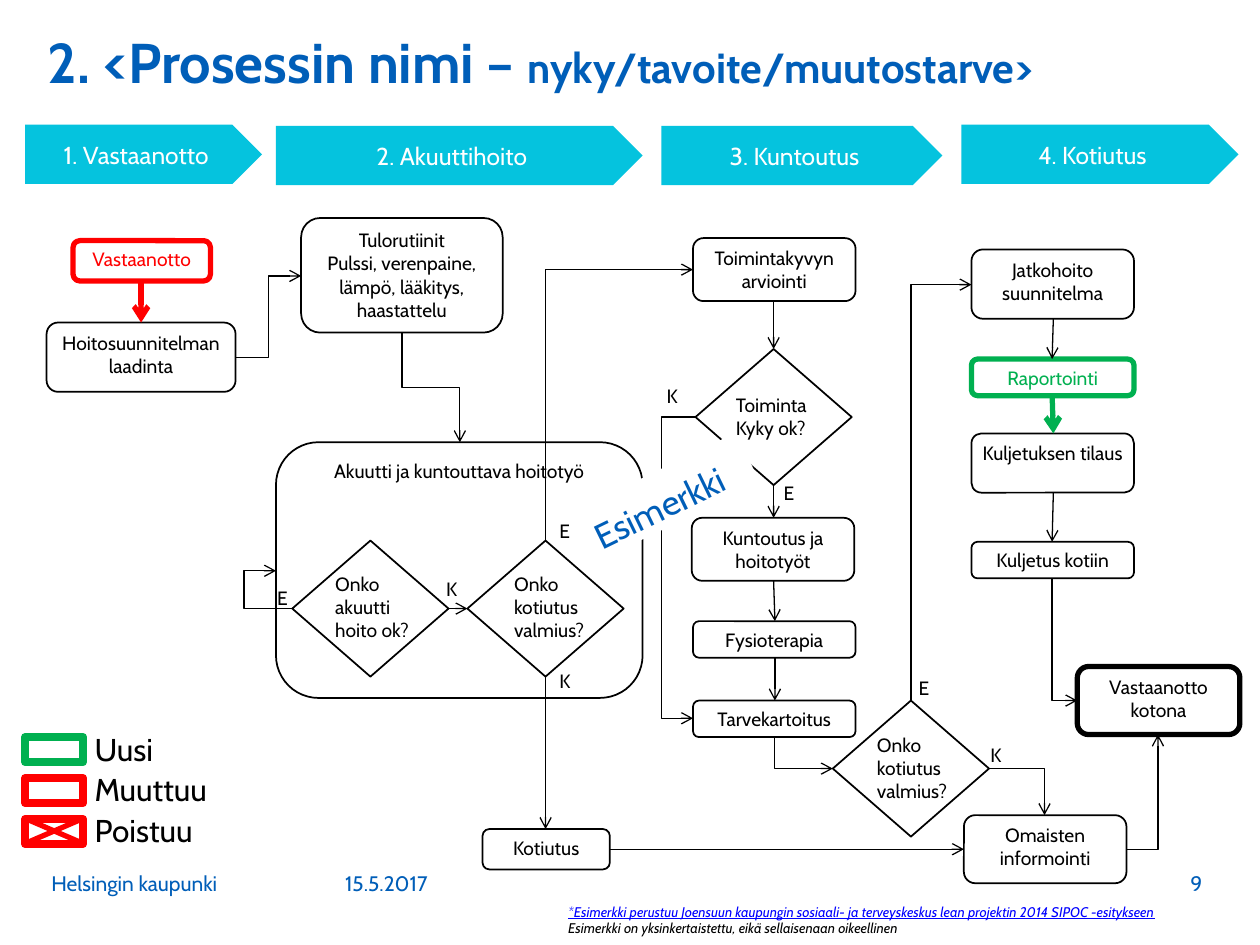
"""Build the care process flow slide and save it as out.pptx."""
from lxml import etree
from pptx import Presentation
from pptx.dml.color import RGBColor
from pptx.enum import shapes, text
from pptx.oxml import ns
from pptx import util as u

BLUE = RGBColor(0x00, 0x5E, 0xB8)
CYAN = RGBColor(0x05, 0xC3, 0xDE)
LINK = RGBColor(0x00, 0x00, 0xFF)
RED = RGBColor(0xFF, 0x00, 0x00)
GREEN = RGBColor(0x00, 0xB0, 0x50)
BLACK = RGBColor(0x00, 0x00, 0x00)
WHITE = RGBColor(0xFF, 0xFF, 0xFF)
KIND = shapes.MSO_SHAPE
TOP, MID, LOW = text.MSO_ANCHOR.TOP, text.MSO_ANCHOR.MIDDLE, text.MSO_ANCHOR.BOTTOM
LEFT, MIDST, RIGHT = text.PP_ALIGN.LEFT, text.PP_ALIGN.CENTER, text.PP_ALIGN.RIGHT

deck = Presentation()
deck.slide_width, deck.slide_height = u.Inches(10), u.Inches(7.5)
col, row = deck.slide_width / 10, deck.slide_height / 7.5
slide = deck.slides.add_slide(deck.slide_layouts[5])
tree = slide.shapes


def put(place, words="", size=11, hue=BLACK, kind=None, fill=WHITE, edge=None, thick=1,
        align=LEFT, pad=0.04, font=None, **frame):
    """Add a text box, or a shape of the given kind, with its text."""
    left, top, wide, high = place
    box = [int(left * col), int(top * row), int(wide * col), int(high * row)]
    if kind is None:
        item = tree.add_textbox(*box)
    else:
        item = tree.add_shape(kind, *box)
        item.shadow.inherit = False
        item.fill.solid()
        item.fill.fore_color.rgb = fill
        if edge is None:
            item.line.fill.background()
        else:
            item.line.color.rgb = edge
            item.line.width = u.Pt(thick)
    body = item.text_frame
    body.text = words
    sides = {f"margin_{side}": u.Inches(pad) for side in ("left", "top", "right", "bottom")}
    look = {"word_wrap": True, "vertical_anchor": TOP, **sides, **frame}
    for name, value in look.items():
        setattr(body, name, value)
    for para in body.paragraphs:
        para.alignment = align
        para.font.color.rgb = hue
        for name, value in {"name": "Cabin", "size": u.Pt(size), **(font or {})}.items():
            setattr(para.font, name, value)
    return item


def link(start, end, way="", bend=None, hue=BLACK, thick=0.75, head=True):
    """Join two points straight, or by an elbow that leaves along way, h or v."""
    (ax, ay), (bx, by) = start, end
    style = shapes.MSO_CONNECTOR.ELBOW if way else shapes.MSO_CONNECTOR.STRAIGHT
    line = tree.add_connector(style, int(ax * col), int(ay * row), int(bx * col), int(by * row))
    line.line.color.rgb = hue
    line.line.width = u.Pt(thick)
    props = line._element.spPr
    etree.SubElement(props, ns.qn("a:effectLst"))
    if head:
        etree.SubElement(line.line._get_or_add_ln(), ns.qn("a:tailEnd"), type="arrow")
    if not way:
        return
    wide, high = abs(bx - ax), abs(by - ay)
    back, rise = bx < ax, by < ay
    if way == "v":
        wide, high = high, wide
        turn, flips = (90, (True, True)) if rise else (270, (True, False))
    else:
        turn, flips = 180 * back, (False, back != rise)
    line.left, line.top = int(((ax + bx) - wide) / 2 * col), int(((ay + by) - high) / 2 * row)
    line.width, line.height = int(wide * col), int(high * row)
    frame = props.find(ns.qn("a:xfrm"))
    values = {"rot": turn * 60000, "flipH": int(flips[0]), "flipV": int(flips[1])}
    for name, value in values.items():
        frame.set(name, str(value))
    shape = props.find(ns.qn("a:prstGeom"))
    shape.set("prst", "bentConnector2" if bend is None else "bentConnector3")
    if bend is not None:
        guides = shape.find(ns.qn("a:avLst"))
        etree.SubElement(guides, ns.qn("a:gd"), name="adj1", fmla=f"val {round(bend * 100000)}")


title = tree.title
title.left, title.top = int(0.28 * col), int(0.25 * row)
title.width, title.height = int(9.22 * col), int(0.75 * row)
title.text_frame.vertical_anchor = TOP
title.text_frame.auto_size = text.MSO_AUTO_SIZE.NONE
para = title.text_frame.paragraphs[0]
para.alignment, para.line_spacing = LEFT, 0.85
for words, size in (("2. <Prosessin nimi – ", 32), ("nyky/tavoite/muutostarve>", 24)):
    run = para.add_run()
    run.text = words
    run.font.color.rgb = BLUE
    for name, value in {"name": "Cabin", "size": u.Pt(size), "bold": True}.items():
        setattr(run.font, name, value)

for place, words, align in (
    ((0.31, 6.7, 2.33, 0.51), "Helsingin kaupunki", LEFT),
    ((2.64, 6.82, 1.55, 0.39), "15.5.2017", LEFT),
    ((8.46, 6.82, 1.18, 0.39), "9", RIGHT),
):
    put(place, words, 12, BLUE, align=align, pad=0.1, vertical_anchor=LOW)

source = "*Esimerkki perustuu Joensuun kaupungin sosiaali- ja terveyskeskus lean projektin 2014 SIPOC -esitykseen"
put((4.51, 7.17, 5.49, 0.13), source, 8, LINK, pad=0, word_wrap=False,
    font={"italic": True, "underline": True})
put((4.51, 7.3, 3.1, 0.13), "Esimerkki on yksinkertaistettu, eikä sellaisenaan oikeellinen", 8,
    pad=0, word_wrap=False, font={"italic": True})

for left, top, wide, words in (
    (0.2, 0.99, 1.88, "1. Vastaanotto"),
    (2.19, 1, 2.91, "2. Akuuttihoito"),
    (5.25, 1, 2.23, "3. Kuntoutus"),
    (7.63, 0.99, 2.2, "4. Kotiutus"),
):
    put((left, top, wide, 0.47), words, 14, WHITE, KIND.PENTAGON, CYAN,
        align=MIDST, vertical_anchor=MID)

for place, words, hue, edge, thick in (
    ((0.58, 1.91, 1.09, 0.32), "Vastaanotto", RED, RED, 3),
    ((0.37, 2.56, 1.5, 0.55), "Hoitosuunnitelman laadinta", BLACK, BLACK, 1),
    ((2.39, 1.73, 1.6, 0.91), "Tulorutiinit\nPulssi, verenpaine, lämpö, lääkitys, haastattelu", BLACK, BLACK, 1),
    ((2.19, 3.51, 2.91, 2.03), "Akuutti ja kuntouttava hoitotyö", BLACK, BLACK, 1),
    ((3.83, 6.58, 1.01, 0.32), "Kotiutus", BLACK, BLACK, 1),
    ((5.5, 1.89, 1.29, 0.5), "Toimintakyvyn arviointi", BLACK, BLACK, 1),
    ((5.49, 4.11, 1.29, 0.5), "Kuntoutus ja hoitotyöt", BLACK, BLACK, 1),
    ((5.5, 4.93, 1.29, 0.29), "Fysioterapia", BLACK, BLACK, 1),
    ((5.5, 5.56, 1.29, 0.29), "Tarvekartoitus", BLACK, BLACK, 1),
    ((7.71, 1.98, 1.29, 0.55), "Jatkohoito suunnitelma", BLACK, BLACK, 1),
    ((7.71, 2.85, 1.29, 0.29), "Raportointi", GREEN, GREEN, 3),
    ((7.71, 3.44, 1.29, 0.47), "Kuljetuksen tilaus", BLACK, BLACK, 1),
    ((7.71, 4.3, 1.29, 0.29), "Kuljetus kotiin", BLACK, BLACK, 1),
    ((7.65, 6.47, 1.29, 0.54), "Omaisten informointi", BLACK, BLACK, 1),
    ((8.55, 5.29, 1.29, 0.54), "Vastaanotto kotona", BLACK, BLACK, 3),
):
    put(place, words, 11, hue, KIND.ROUNDED_RECTANGLE, edge=edge, thick=thick, align=MIDST)

for left, top, shift, drop, high, words in (
    (2.32, 4.29, 0.3, 0.21, 0.63, "Onko akuutti hoito ok?"),
    (3.71, 4.29, 0.33, 0.21, 0.63, "Onko kotiutus\nvalmius?"),
    (5.52, 2.77, 0.28, 0.31, 0.45, "Toiminta\nKyky ok?"),
    (6.61, 5.56, 0.31, 0.22, 0.63, "Onko kotiutus\nvalmius?"),
):
    put((left, top, 1.24, 1.08), kind=KIND.FLOWCHART_DECISION, edge=BLACK)
    put((left + shift, top + drop, 0.83, high), words)

for mark, spots in {
    "E": ((2.16, 4.61), (4.4, 4.08), (6.18, 3.78), (7.25, 5.33)),
    "K": ((3.5, 4.54), (4.4, 5.27), (5.25, 3.01), (7.82, 5.86)),
}.items():
    for left, top in spots:
        put((left, top, 0.24, 0.27), mark)

for start, end in (
    ((3.56, 4.83), (3.71, 4.83)), ((4.33, 5.37), (4.33, 6.58)),
    ((6.14, 2.4), (6.14, 2.77)), ((6.14, 3.85), (6.14, 4.11)),
    ((6.14, 4.61), (6.15, 4.93)), ((6.15, 5.22), (6.15, 5.56)),
    ((8.36, 2.53), (8.35, 2.85)), ((8.36, 3.91), (8.35, 4.3)),
    ((4.84, 6.74), (7.65, 6.74)),
):
    link(start, end)
link((1.12, 2.22), (1.12, 2.56), hue=RED, thick=3)
link((8.35, 3.13), (8.36, 3.44), hue=GREEN, thick=3)

for start, end, way, bend in (
    ((1.87, 2.84), (2.39, 2.19), "h", 0.5),
    ((2.32, 4.83), (2.19, 4.53), "h", 2.96),
    ((3.19, 2.64), (3.65, 3.51), "v", 0.5),
    ((5.52, 3.31), (5.5, 5.7), "h", 13.5),
    ((4.33, 4.29), (5.5, 2.14), "v", None),
    ((6.15, 5.85), (6.61, 6.1), "v", None),
    ((7.23, 5.56), (7.71, 2.26), "v", None),
    ((8.94, 6.74), (9.19, 5.83), "h", None),
    ((8.35, 4.59), (8.55, 5.56), "v", None),
    ((7.85, 6.1), (8.29, 6.47), "h", None),
):
    link(start, end, way, bend)

stamp = put((4.55, 3.73, 1.46, 0.44), "Esimerkki", 20, BLUE, KIND.RECTANGLE, pad=0.1, word_wrap=False)
stamp.rotation = 334.1

for step, (words, edge, wide) in enumerate(
        (("Uusi", GREEN, 0.51), ("Muuttuu", RED, 1.01), ("Poistuu", RED, 0.88))):
    top = 5.85 + step * 0.325
    put((0.2, top, 0.46, 0.2), kind=KIND.RECTANGLE, edge=edge, thick=4.5)
    put((0.75, top - 0.06, wide, 0.3), words, 18, pad=0, word_wrap=False)
for left, right in ((0.21, 0.65), (0.65, 0.21)):
    link((left, 6.69), (right, 6.5), hue=RED, thick=3, head=False)

deck.save("out.pptx")
